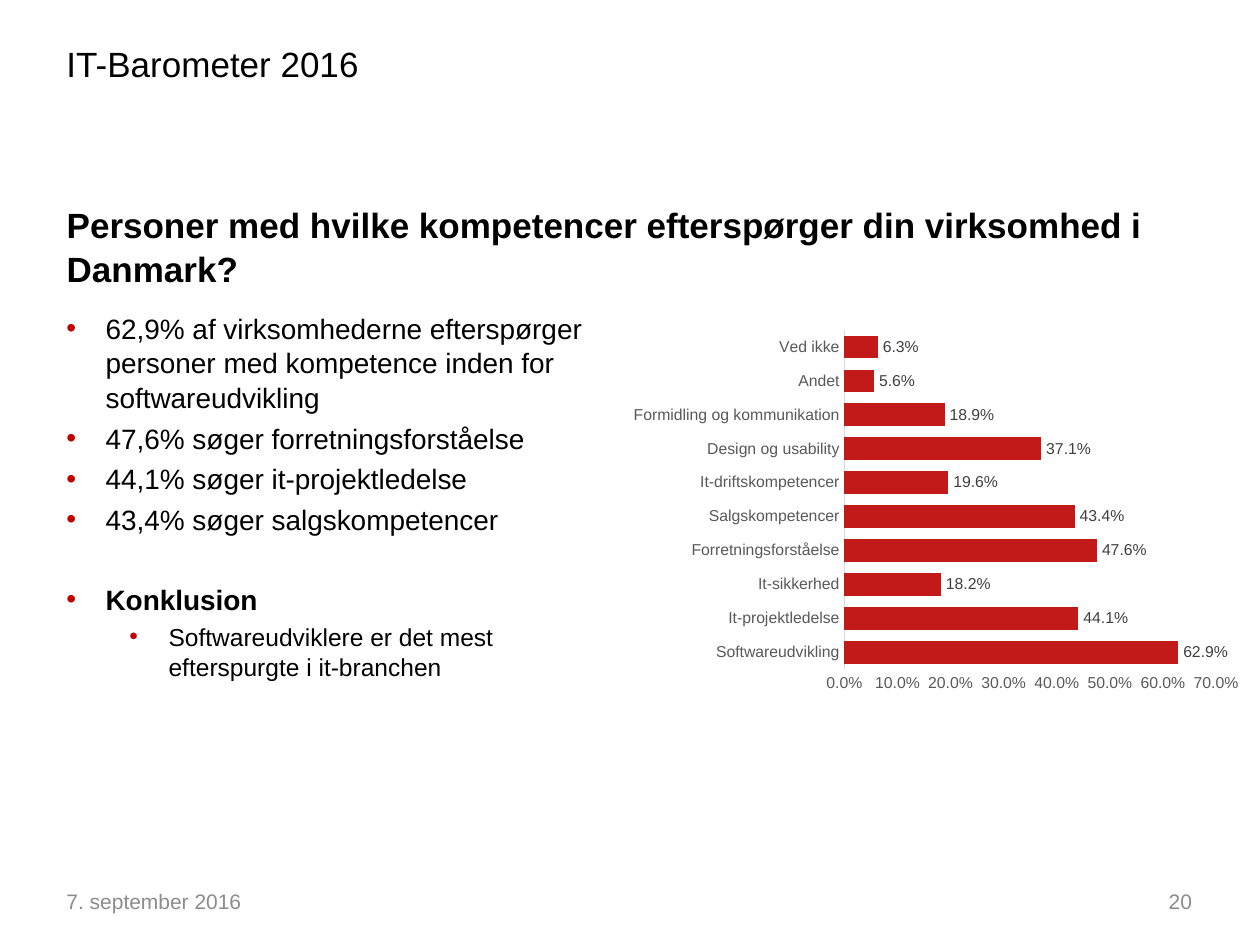
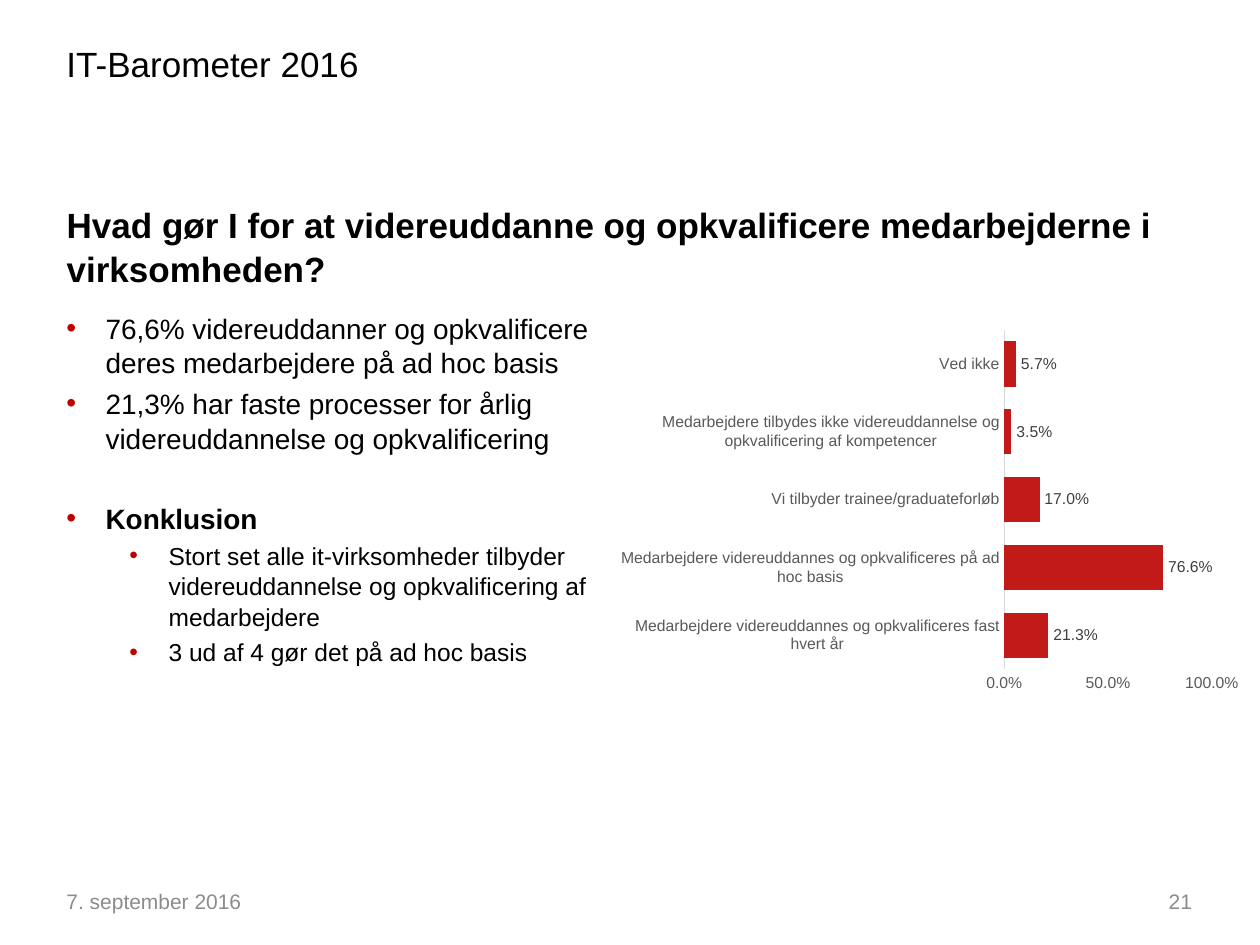
import pptx
import pptx.chart.data
import pptx.dml.color
import pptx.enum.chart
import pptx.enum.text
import pptx.util
from lxml import etree
from pptx.oxml.ns import qn

Cm, Pt = pptx.util.Cm, pptx.util.Pt
ALIGN = pptx.enum.text.PP_ALIGN
ANCHOR = pptx.enum.text.MSO_ANCHOR
FONT = "Arial"
COLORS = {"text": "000000", "footer": "8C8C8C", "bullet": "C00000", "bar": "C21919",
          "axis_text": "595959", "axis_line": "D9D9D9", "value": "404040"}
LINE_SPACING = 1.04
SIZES = (16, 14)  # bullet text by level
LEFT = 1.09
PERCENT = "0.0%"

# Boxes in cm: left, top, width, height
HEADER_BOX = (LEFT, 0.74, 8.05, 1.02)
TITLE_BOX = (LEFT, 3.94, 22.86, 1.4)
BODY_BOX = (LEFT, 6.12, 11.4, 11.2)
CHART_BOX = (12.52, 6.5, 12.7, 7.62)
DATE_BOX = (LEFT, 17.65, 5.92, 1.02)
NUMBER_BOX = (18.36, 17.65, 5.92, 1.02)

# Bullets: (level, text, bold)
SLIDES = [
    {
        "number": "20",
        "title": "Personer med hvilke kompetencer efterspørger din virksomhed i Danmark?",
        "bullets": [
            (0, "62,9% af virksomhederne efterspørger personer med kompetence inden for "
                "softwareudvikling", False),
            (0, "47,6% søger forretningsforståelse", False),
            (0, "44,1% søger it-projektledelse", False),
            (0, "43,4% søger salgskompetencer", False),
            (0, "Konklusion", True),
            (1, "Softwareudviklere er det mest efterspurgte i it-branchen", False),
        ],
        "data": {
            "Softwareudvikling": 0.629, "It-projektledelse": 0.441, "It-sikkerhed": 0.182,
            "Forretningsforståelse": 0.476, "Salgskompetencer": 0.434,
            "It-driftskompetencer": 0.196, "Design og usability": 0.371,
            "Formidling og kommunikation": 0.189, "Andet": 0.056, "Ved ikke": 0.063,
        },
        "axis": (0.7, 0.1),
    },
    {
        "number": "21",
        "title": "Hvad gør I for at videreuddanne og opkvalificere medarbejderne i "
                 "virksomheden?",
        "bullets": [
            (0, "76,6% videreuddanner og opkvalificere deres medarbejdere på ad hoc basis",
             False),
            (0, "21,3% har faste processer for årlig videreuddannelse og opkvalificering",
             False),
            (0, "Konklusion", True),
            (1, "Stort set alle it-virksomheder tilbyder videreuddannelse og "
                "opkvalificering af medarbejdere", False),
            (1, "3 ud af 4 gør det på ad hoc basis", False),
        ],
        "data": {
            "Medarbejdere videreuddannes og opkvalificeres fast hvert år": 0.213,
            "Medarbejdere videreuddannes og opkvalificeres på ad hoc basis": 0.766,
            "Vi tilbyder trainee/graduateforløb": 0.17,
            "Medarbejdere tilbydes ikke videreuddannelse og opkvalificering "
            "af kompetencer": 0.035,
            "Ved ikke": 0.057,
        },
        "axis": (1, 0.5),
    },
]


def rgb(name):
    return pptx.dml.color.RGBColor.from_string(COLORS[name])


def set_font(font, size, color, bold=False):
    font.name, font.size, font.bold = FONT, Pt(size), bold
    font.color.rgb = rgb(color)


def add_run(p, text, size, color="text", bold=False):
    r = p.add_run()
    r.text = text
    set_font(r.font, size, color, bold)


def prepare_frame(sp, anchor=ANCHOR.TOP):
    tf = sp.text_frame
    tf.word_wrap = True
    tf.auto_size = pptx.enum.text.MSO_AUTO_SIZE.NONE
    tf.vertical_anchor = anchor
    return tf


def add_textbox(slide, box):
    return slide.shapes.add_textbox(*map(Cm, box))


def add_line(slide, box, text, size, color, anchor=ANCHOR.TOP, align=ALIGN.LEFT):
    p = prepare_frame(add_textbox(slide, box), anchor).paragraphs[0]
    p.alignment = align
    add_run(p, text, size, color)


def add_frame(slide, number):
    """Header, date and page number shared by all slides."""
    add_line(slide, DATE_BOX, "7. september 2016", 12, "footer", ANCHOR.MIDDLE)
    add_line(slide, HEADER_BOX, "IT-Barometer 2016", 20, "text")
    add_line(slide, NUMBER_BOX, number, 12, "footer", ANCHOR.MIDDLE, ALIGN.RIGHT)


def set_title(slide, box, text):
    sp = slide.shapes.title
    sp.left, sp.top, sp.width, sp.height = map(Cm, box)
    p = prepare_frame(sp).paragraphs[0]
    p.alignment = ALIGN.LEFT
    p.line_spacing = LINE_SPACING
    add_run(p, text, 20, bold=True)


def set_bullet(p, level):
    pPr = p._p.get_or_add_pPr()
    pPr.set("marL", str(Cm(0.79 + 1.27 * level)))
    pPr.set("indent", str(-Cm(0.79)))
    color = etree.SubElement(pPr, qn("a:buClr"))
    etree.SubElement(color, qn("a:srgbClr"), val=COLORS["bullet"])
    etree.SubElement(pPr, qn("a:buFont"), typeface=FONT)
    etree.SubElement(pPr, qn("a:buChar"), char="•")


def add_bullets(slide, box, bullets):
    tf = prepare_frame(add_textbox(slide, box))
    for i, (level, text, bold) in enumerate(bullets):
        p = tf.paragraphs[0] if i == 0 else tf.add_paragraph()
        size = SIZES[level]
        p.level = level
        p.line_spacing = LINE_SPACING
        if i:
            # The bold conclusion stands one line further down
            p.space_before = Pt(25.5 if bold else 0.2 * size)
        set_bullet(p, level)
        add_run(p, text, size, bold=bold)


def add_bar_chart(slide, box, data, maximum, step):
    chart_data = pptx.chart.data.CategoryChartData(number_format=PERCENT)
    chart_data.categories = list(data)
    chart_data.add_series("Series 1", list(data.values()))
    chart = slide.shapes.add_chart(pptx.enum.chart.XL_CHART_TYPE.BAR_CLUSTERED,
                                   *map(Cm, box), chart_data).chart
    chart.has_title = chart.has_legend = False
    set_font(chart.font, 10, "text")

    # Axes
    for axis in (chart.category_axis, chart.value_axis):
        axis.has_major_gridlines = False
        axis.major_tick_mark = axis.minor_tick_mark = pptx.enum.chart.XL_TICK_MARK.NONE
        set_font(axis.tick_labels.font, 9, "axis_text")
    line = chart.category_axis.format.line
    line.color.rgb, line.width = rgb("axis_line"), Pt(0.75)
    values = chart.value_axis
    values.format.line.fill.background()
    values.minimum_scale, values.maximum_scale, values.major_unit = 0, maximum, step
    values.tick_labels.number_format = PERCENT
    values.tick_labels.number_format_is_linked = False

    # Bars and their values
    plot = chart.plots[0]
    plot.gap_width, plot.vary_by_categories = 50, False
    fill = plot.series[0].format.fill
    fill.solid()
    fill.fore_color.rgb = rgb("bar")
    plot.has_data_labels = True
    labels = plot.data_labels
    labels.show_value = True
    labels.position = pptx.enum.chart.XL_LABEL_POSITION.OUTSIDE_END
    labels.number_format, labels.number_format_is_linked = PERCENT, False
    set_font(labels.font, 9, "value")


def add_question_slide(prs, content):
    slide = prs.slides.add_slide(prs.slide_layouts[5])
    add_frame(slide, content["number"])
    set_title(slide, TITLE_BOX, content["title"])
    add_bullets(slide, BODY_BOX, content["bullets"])
    add_bar_chart(slide, CHART_BOX, content["data"], *content["axis"])


def main():
    prs = pptx.Presentation()
    prs.slide_width, prs.slide_height = Cm(25.4), Cm(19.05)
    for content in SLIDES:
        add_question_slide(prs, content)
    prs.save("out.pptx")


if __name__ == "__main__":
    main()
